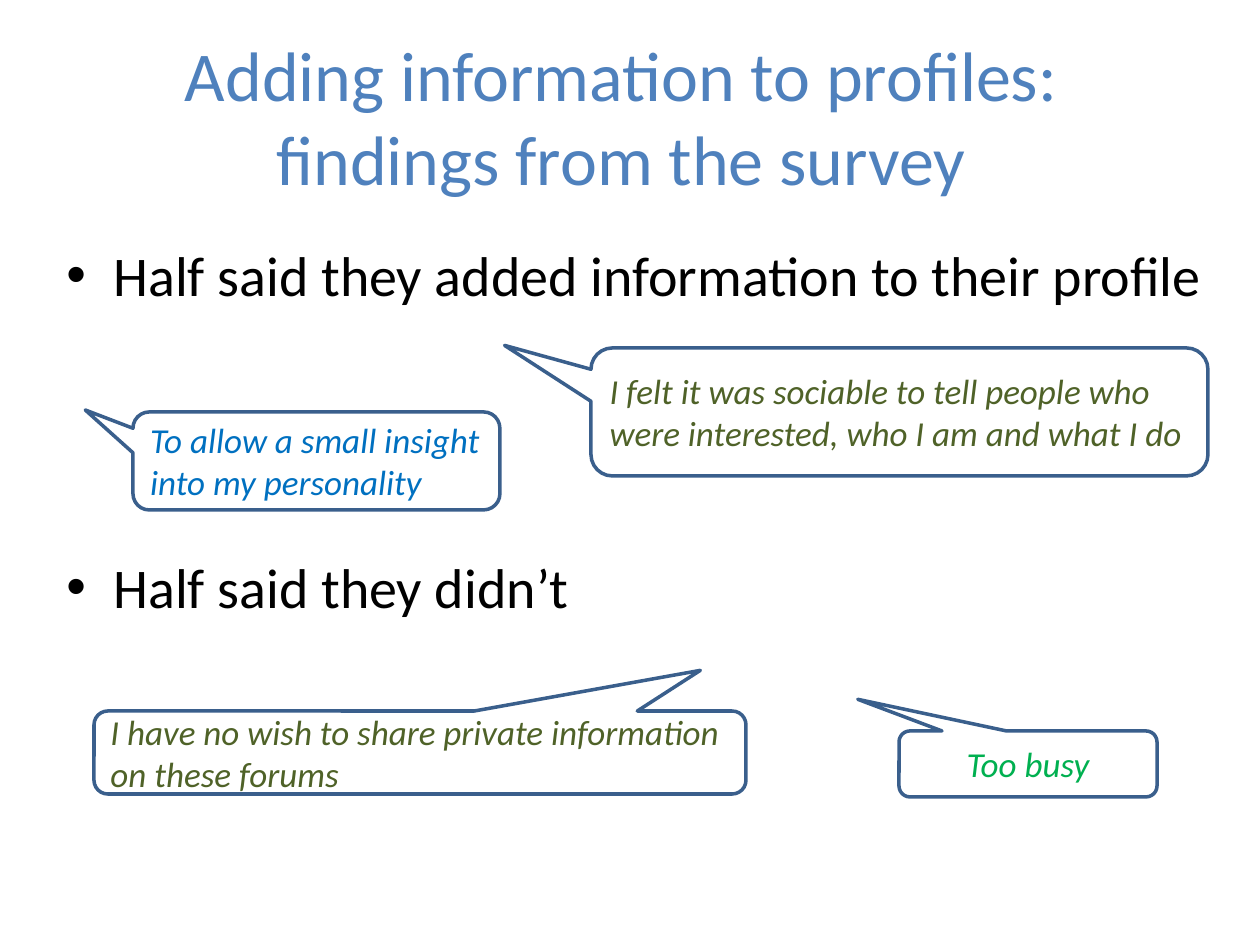
from pptx import Presentation
from pptx.dml.color import RGBColor
from pptx.enum.shapes import MSO_SHAPE as Shape
from pptx.enum.text import MSO_ANCHOR as Anchor, PP_ALIGN as Align
from pptx.oxml.ns import qn
from pptx.util import Pt
from lxml.etree import SubElement

PX = 914400 / 126
FONT = "Calibri"
COLORS = {
    "title": "4F81BD", "body": "000000", "outline": "3A5F8C",
    "blue": "0070C0", "olive": "4F6228", "green": "00B050",
}


def px(length):
    return round(length * PX)


def color(name):
    return RGBColor.from_string(COLORS[name])


def add_run(paragraph, text, size, color_name, italic=False):
    run = paragraph.add_run()
    run.text = text
    run.font.name = FONT
    run.font.size = Pt(size)
    run.font.italic = italic
    run.font.color.rgb = color(color_name)


def place_title(slide, box, text):
    title = slide.shapes.title
    title.left, title.top, title.width, title.height = map(px, box)
    title.text_frame.vertical_anchor = Anchor.MIDDLE
    heading = title.text_frame.paragraphs[0]
    heading.alignment = Align.CENTER
    add_run(heading, text, 40, "title")


def add_findings(slide, box, findings, gap):
    frame = slide.shapes.add_textbox(*map(px, box)).text_frame
    frame.word_wrap = True
    for index, finding in enumerate(findings):
        paragraph = frame.add_paragraph() if index else frame.paragraphs[0]
        # Hanging bullet
        properties = paragraph._p.get_or_add_pPr()
        properties.set("marL", str(px(47)))
        properties.set("indent", str(px(-47)))
        if index:
            paragraph.space_before = Pt(gap)
        SubElement(properties, qn("a:buFont"), typeface="Arial")
        SubElement(properties, qn("a:buChar"), char="•")
        add_run(paragraph, finding, 32, "body")


def add_quote(slide, box, pointer, text, color_name, align=Align.LEFT):
    quote = slide.shapes.add_shape(Shape.ROUNDED_RECTANGULAR_CALLOUT, *map(px, box))
    quote.shadow.inherit = False
    quote.fill.background()
    quote.line.color.rgb = color("outline")
    quote.line.width = Pt(2)
    # Pointer tip, as a share of the box measured from its centre
    quote.adjustments[0], quote.adjustments[1] = pointer
    frame = quote.text_frame
    frame.word_wrap = True
    frame.vertical_anchor = Anchor.MIDDLE
    paragraph = frame.paragraphs[0]
    paragraph.alignment = align
    add_run(paragraph, text, 20, color_name, italic=True)


def main():
    deck = Presentation()
    deck.slide_width, deck.slide_height = px(1260), px(945)
    slide = deck.slides.add_slide(deck.slide_layouts[5])

    place_title(slide, (54, 37, 1134, 157),
                "Adding information to profiles: findings from the survey")
    add_findings(slide, (54, 234, 1171, 554),
                 ["Half said they added information to their profile",
                  "Half said they didn’t"], gap=140)

    # Reasons for adding information
    add_quote(slide, (133, 412, 367, 98), (-0.63, -0.52),
              "To allow a small insight into my personality", "blue")
    add_quote(slide, (591, 348, 617, 128), (-0.64, -0.52),
              "I felt it was sociable to tell people who were interested, "
              "who I am and what I do", "olive")

    # Reasons for not adding information
    add_quote(slide, (94, 711, 652, 83), (0.43, -0.99),
              "I have no wish to share private information on these forums", "olive")
    add_quote(slide, (899, 731, 258, 66), (-0.66, -0.98),
              "Too busy", "green", Align.CENTER)

    deck.save("out.pptx")


if __name__ == "__main__":
    main()
